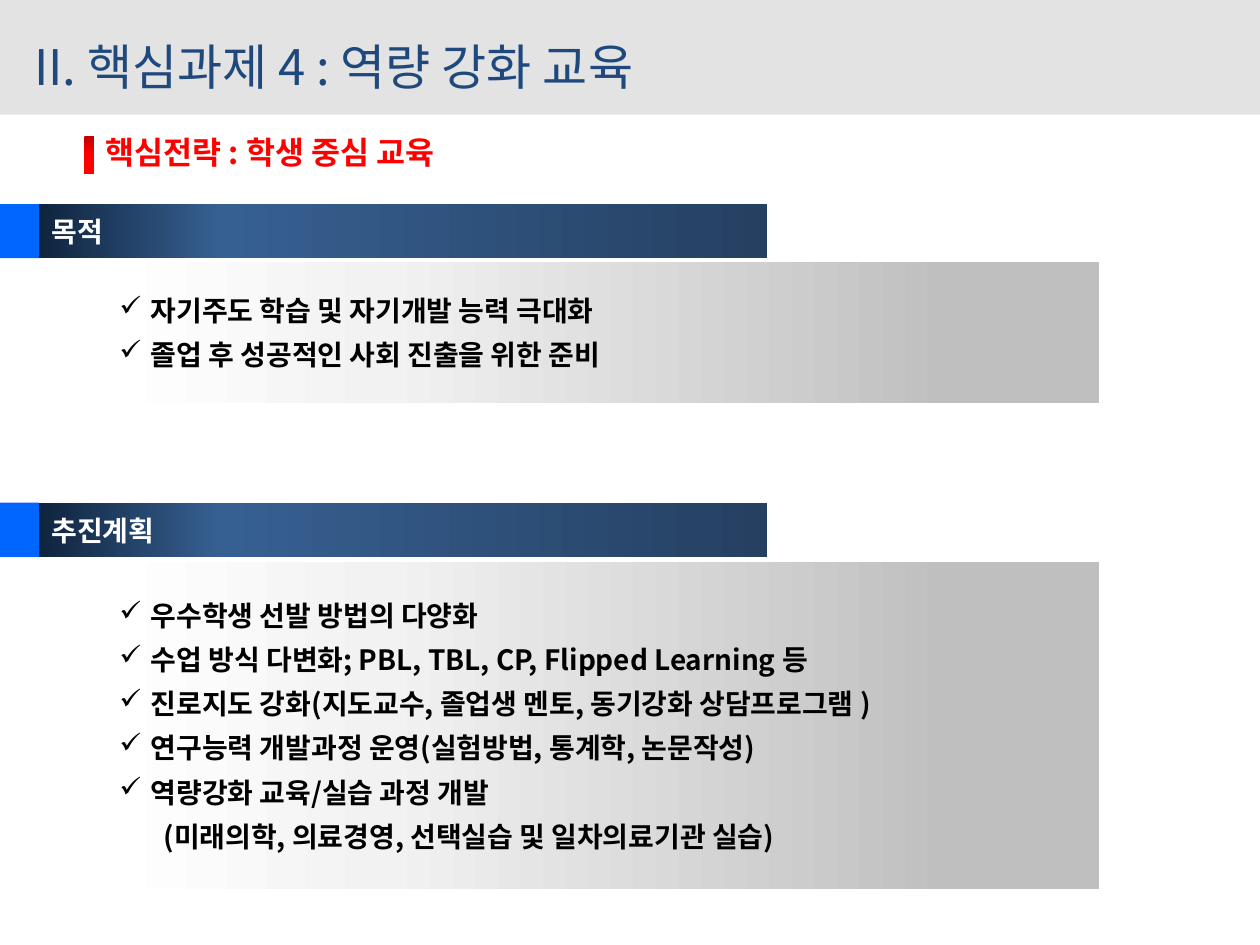
"""Build the slide on competency education: strategy, purpose and plan."""
from copy import deepcopy

from pptx import Presentation
from pptx import util as u
from pptx.dml.color import RGBColor
from pptx.enum import shapes, text
from pptx.oxml import ns
from lxml import etree

FACE = "Noto Sans CJK KR"
NAVY = RGBColor(0x1F, 0x49, 0x7D)
RED = RGBColor(0xFF, 0x00, 0x00)
MAROON = RGBColor(0xC0, 0x00, 0x00)
BLUE = RGBColor(0x00, 0x66, 0xFF)
WHITE = RGBColor(0xFF, 0xFF, 0xFF)
BLACK = RGBColor(0x00, 0x00, 0x00)
BAND = RGBColor(0xE3, 0xE3, 0xE3)
PALE = RGBColor(0xF2, 0xF2, 0xF2)
GREY = RGBColor(0xBF, 0xBF, 0xBF)
INK = RGBColor(0x0F, 0x24, 0x3E)
STEEL = RGBColor(0x37, 0x60, 0x92)
SLATE = RGBColor(0x25, 0x40, 0x61)


def add_box(page, box, stops, angle=0):
    """Add a borderless rectangle, plain for one stop and graded for three."""
    shape = page.shapes.add_shape(shapes.MSO_SHAPE.RECTANGLE, *map(u.Inches, box))
    shape.shadow.inherit = False
    shape.line.fill.background()
    fill = shape.fill
    if len(stops) == 1:
        fill.solid()
        fill.fore_color.rgb = stops[0][1]
        return shape
    fill.gradient()
    fill.gradient_angle = angle
    first = shape._element.spPr.find(".//" + ns.qn("a:gs"))
    first.addnext(deepcopy(first))
    for stop, (place, color) in zip(fill.gradient_stops, stops):
        stop.position = place
        stop.color.rgb = color
    return shape


def write(para, words, size, color, bold=True):
    """Write one left-aligned run in the slide's typeface."""
    para.alignment = text.PP_ALIGN.LEFT
    run = para.add_run()
    run.text = words
    style = {"name": FACE, "size": u.Pt(size), "bold": bold}
    for key, value in style.items():
        setattr(run.font, key, value)
    run.font.color.rgb = color
    east = etree.SubElement(run.font._element, ns.qn("a:ea"))
    east.set("typeface", FACE)


deck = Presentation()
deck.slide_width, deck.slide_height = u.Inches(10), u.Inches(7.5)
page = deck.slides.add_slide(deck.slide_layouts[5])

title = page.shapes.title
spot = {"left": 0.17, "top": 0.23, "width": 9.83, "height": 0.59}
for key, value in spot.items():
    setattr(title, key, u.Inches(value))
title.text_frame.vertical_anchor = text.MSO_ANCHOR.MIDDLE
write(title.text_frame.paragraphs[0], "II. 핵심과제 4 : 역량 강화 교육", 28, NAVY, False)
band = add_box(page, (0, 0, 10, 0.91), [(0, BAND)])
title._element.addprevious(band._element)

parts = [
    ("목적", 1.62, 2.08, 1.12, [
        "자기주도 학습 및 자기개발 능력 극대화",
        "졸업 후 성공적인 사회 진출을 위한 준비",
    ], ""),
    ("추진계획", 3.99, 4.46, 2.6, [
        "우수학생 선발 방법의 다양화",
        "수업 방식 다변화; PBL, TBL, CP, Flipped Learning 등",
        "진로지도 강화(지도교수, 졸업생 멘토, 동기강화 상담프로그램 )",
        "연구능력 개발과정 운영(실험방법, 통계학, 논문작성)",
        "역량강화 교육/실습 과정 개발",
    ], "(미래의학, 의료경영, 선택실습 및 일차의료기관 실습)"),
]
for name, top, low, tall, items, note in parts:
    panel = add_box(page, (0.85, low, 7.87, tall), [(0, WHITE), (0.28, PALE), (0.85, GREY)])
    frame = panel.text_frame
    frame.vertical_anchor = text.MSO_ANCHOR.MIDDLE
    lines = items + [note] if note else items
    for i, line in enumerate(lines):
        para = frame.add_paragraph() if i else frame.paragraphs[0]
        props = para._p.get_or_add_pPr()
        if line == note:
            props.set("marL", str(u.Inches(0.35)))
        else:
            props.set("marL", str(u.Inches(0.25)))
            props.set("indent", str(u.Inches(-0.25)))
            etree.SubElement(props, ns.qn("a:buChar")).set("char", "✓")
        para.space_after = u.Pt(6)
        write(para, line, 16, BLACK)
    head = add_box(page, (0.31, top, 5.78, 0.43), [(0, INK), (0.25, STEEL), (1, SLATE)])
    head.text_frame.vertical_anchor = text.MSO_ANCHOR.MIDDLE
    write(head.text_frame.paragraphs[0], name, 16, WHITE)
    add_box(page, (0, top, 0.31, 0.43), [(0, BLUE)])

label = page.shapes.add_textbox(*map(u.Inches, (0.74, 1.01, 7.09, 0.4)))
label.text_frame.word_wrap = True
write(label.text_frame.paragraphs[0], "핵심전략 : 학생 중심 교육", 18, RED)
add_box(page, (0.67, 1.08, 0.08, 0.3), [(0, MAROON), (0.5, RED), (1, RED)], 270)

deck.save("out.pptx")
